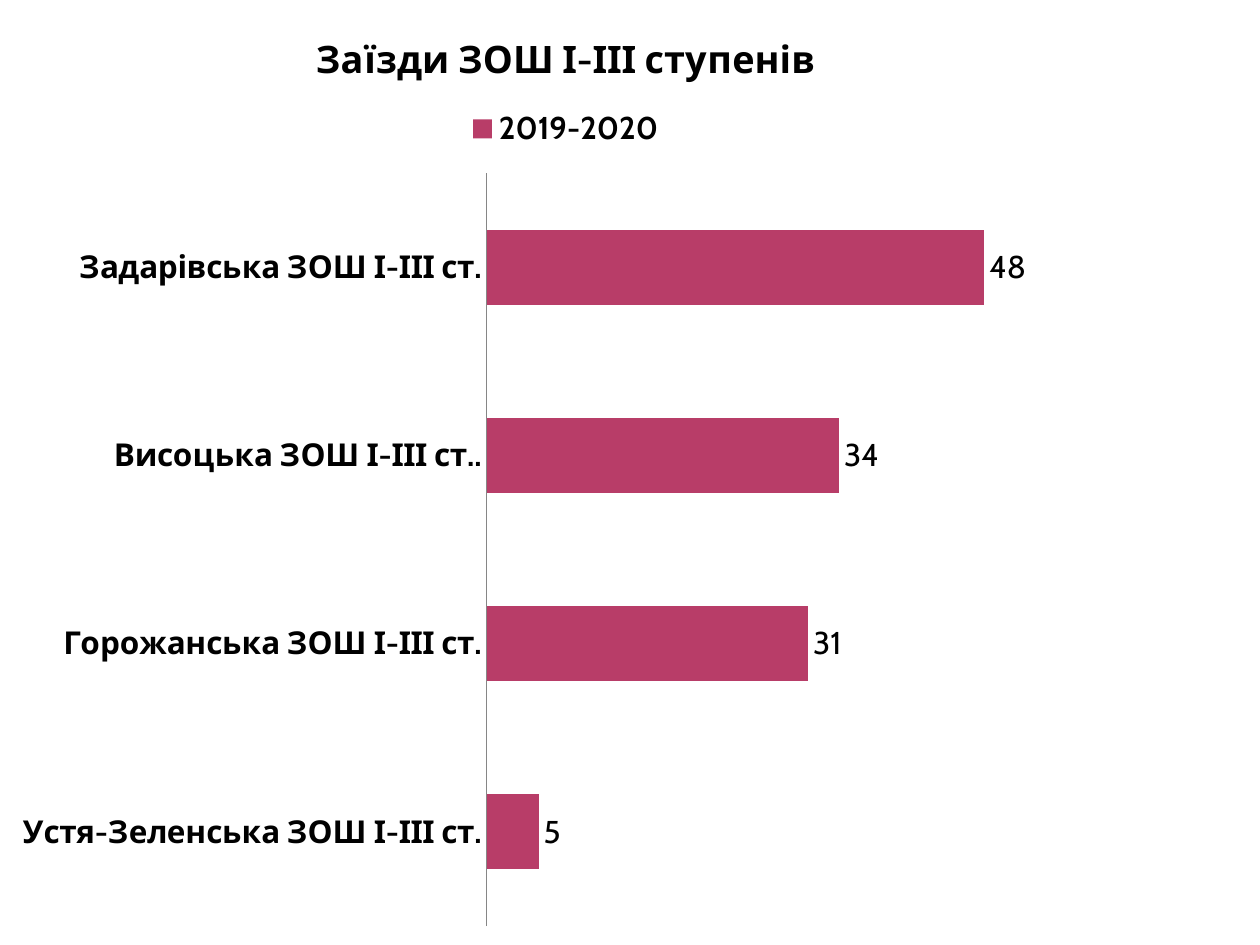
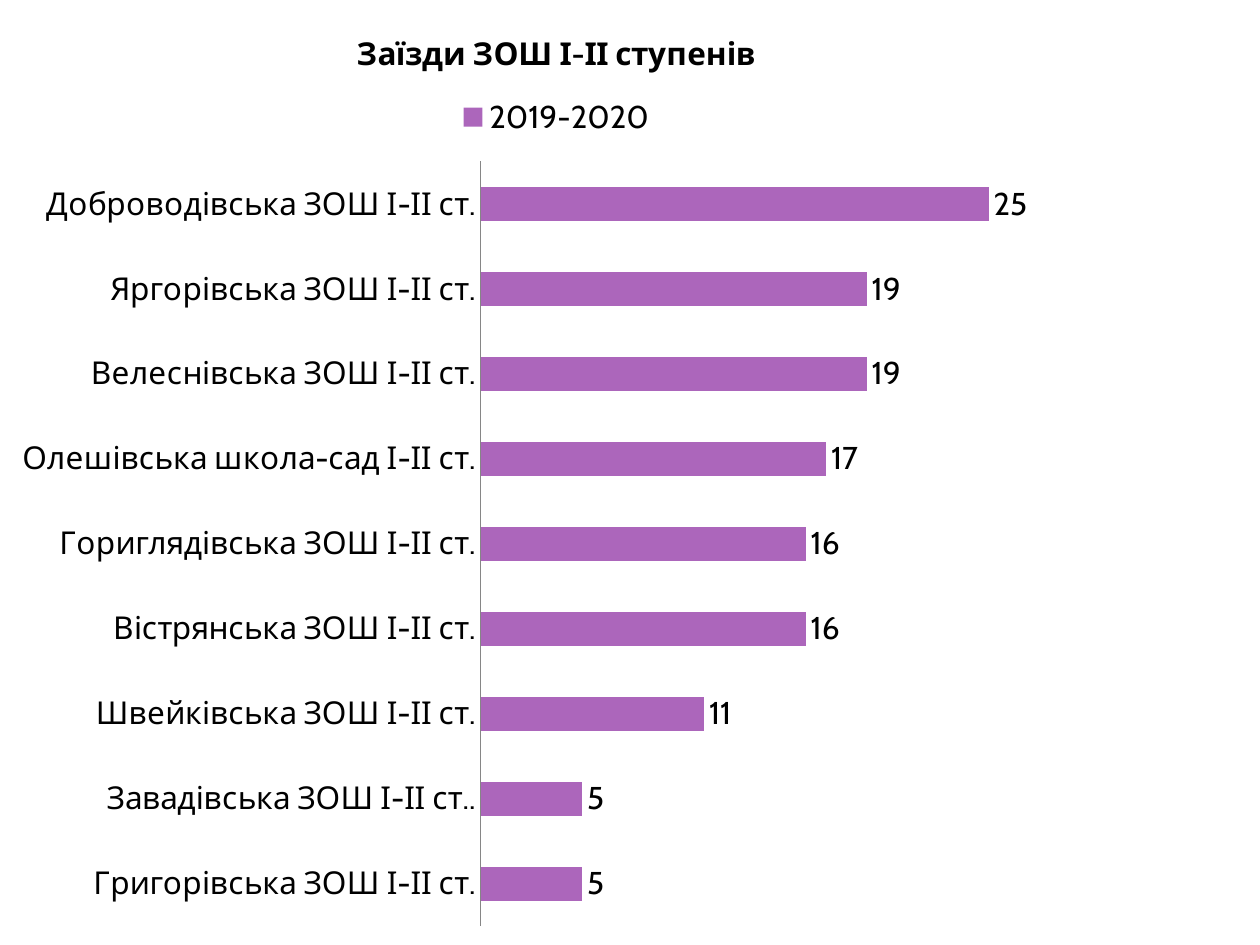
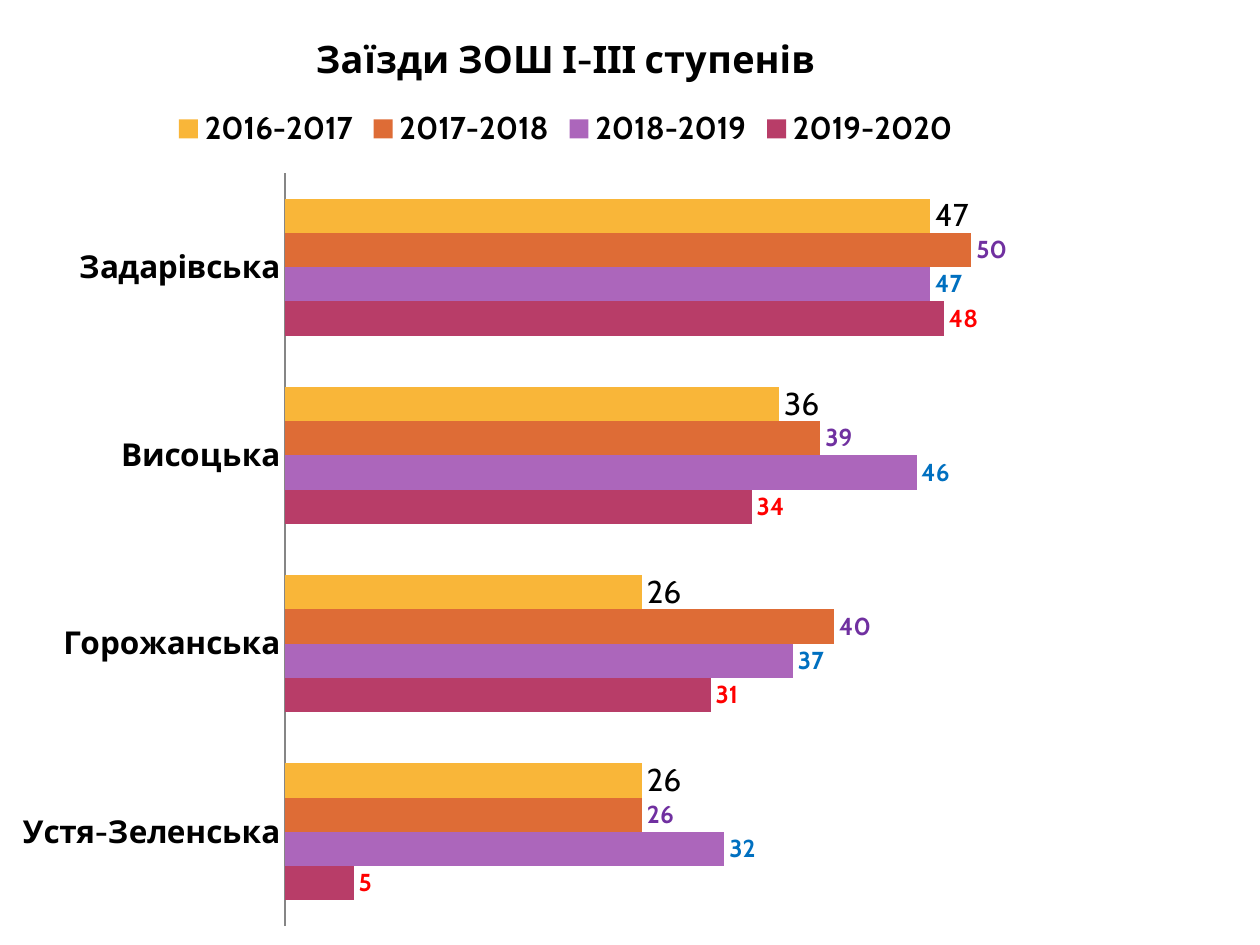
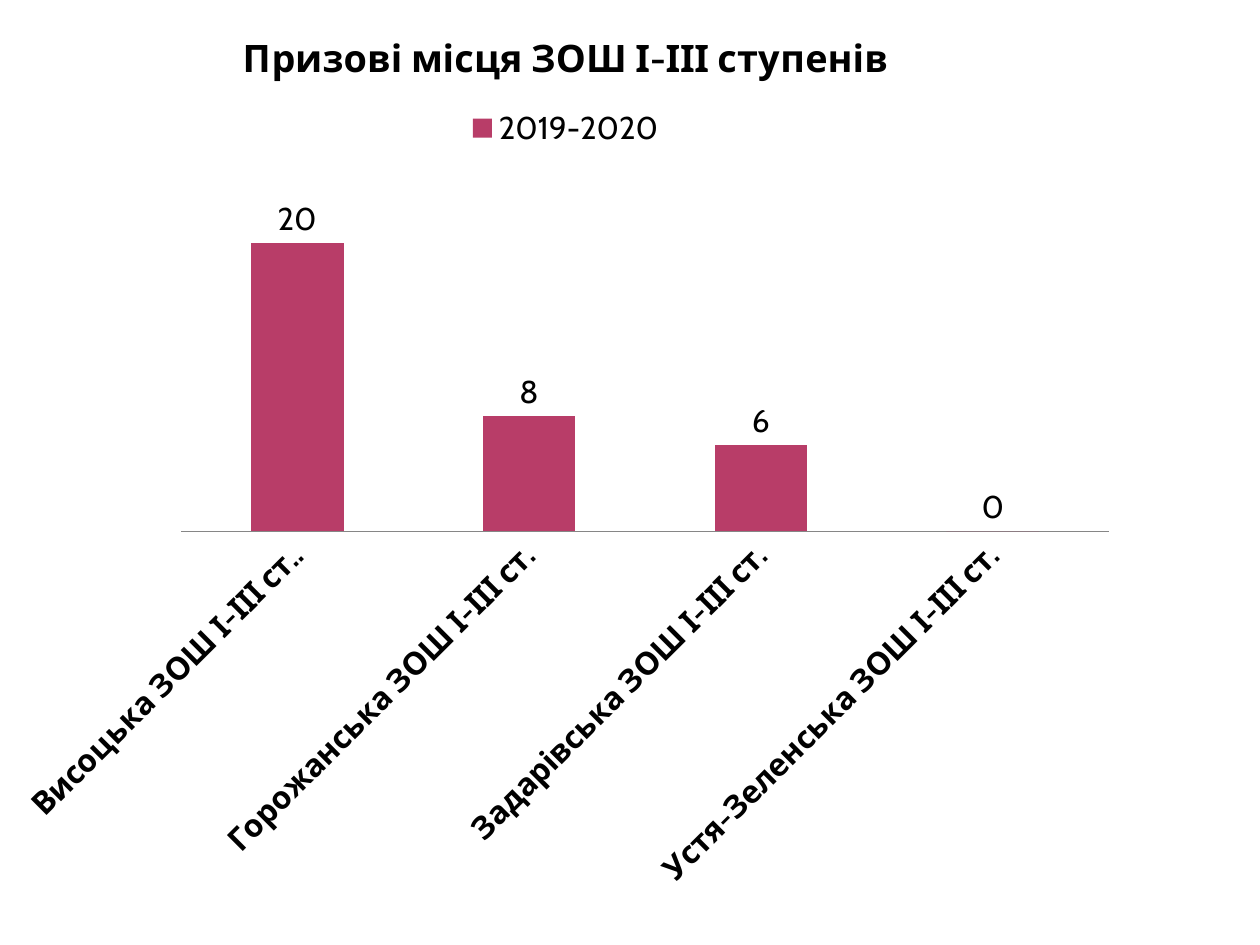
"""Build four chart slides on school camp arrivals and prize places."""
import dataclasses
import typing

import pptx
import pptx.chart.data
import pptx.dml.color
import pptx.enum.chart
import pptx.util

Inches, Pt = pptx.util.Inches, pptx.util.Pt
XL = pptx.enum.chart

FONT = "Cabin"
COLORS = {
    "text": "000000", "axis": "868686", "white": "FFFFFF",
    "berry": "B83D68", "violet": "AC66BB", "orange": "DE6C36", "amber": "F9B639",
    "red": "FF0000", "blue": "0070C0", "purple": "7030A0",
}
TYPE_III = " ЗОШ І-ІІІ ст."
TYPE_II = " ЗОШ І-ІІ ст."


@dataclasses.dataclass(frozen=True)
class Series:
    name: str
    values: tuple[int, ...]
    color: str = "berry"
    label_color: str = "text"
    label_size: float = 18
    label_bold: bool = False


@dataclasses.dataclass(frozen=True)
class ChartSlide:
    title: str
    categories: tuple[str, ...]
    series: tuple[Series, ...]
    width: float = 8.98
    height: float = 7.5
    title_size: float = 21.6
    bold_categories: bool = True
    bold_legend: bool = False
    columns: bool = False


ARRIVALS = (5, 31, 34, 48)
SLIDES = (
    ChartSlide(
        "Заїзди ЗОШ І-ІІІ ступенів",
        ("Устя-Зеленська" + TYPE_III, "Горожанська" + TYPE_III,
         "Висоцька" + TYPE_III + ".", "Задарівська" + TYPE_III),
        (Series("2019-2020", ARRIVALS),),
        bold_legend=True,
    ),
    ChartSlide(
        "Заїзди ЗОШ І-ІІ ступенів",
        ("Григорівська" + TYPE_II, "Завадівська" + TYPE_II + ".",
         "Швейківська" + TYPE_II, "Вістрянська" + TYPE_II,
         "Гориглядівська" + TYPE_II, "Олешівська школа-сад І-ІІ ст.",
         "Велеснівська" + TYPE_II, "Яргорівська" + TYPE_II,
         "Доброводівська" + TYPE_II),
        (Series("2019-2020", (5, 5, 11, 16, 16, 17, 19, 19, 25), "violet"),),
        width=8.83, title_size=18, bold_categories=False,
    ),
    ChartSlide(
        "Заїзди ЗОШ І-ІІІ ступенів",
        ("Устя-Зеленська", "Горожанська", "Висоцька", "Задарівська"),
        (Series("2019-2020", ARRIVALS, "berry", "red", 14, True),
         Series("2018-2019", (32, 37, 46, 47), "violet", "blue", 14, True),
         Series("2017-2018", (26, 40, 39, 50), "orange", "purple", 14, True),
         Series("2016-2017", (26, 26, 36, 47), "amber")),
        bold_legend=True,
    ),
    ChartSlide(
        "Призові місця ЗОШ І-ІІІ ступенів",
        ("Висоцька" + TYPE_III + ".", "Горожанська" + TYPE_III,
         "Задарівська" + TYPE_III, "Устя-Зеленська" + TYPE_III),
        (Series("2019-2020", (20, 8, 6, 0)),),
        height=7.19, columns=True,
    ),
)


def rgb(name: str) -> pptx.dml.color.RGBColor:
    return pptx.dml.color.RGBColor.from_string(COLORS[name])


def set_font(font: typing.Any, size: float = 18, bold: bool = False, color: str = "text") -> None:
    font.name, font.size, font.bold = FONT, Pt(size), bold
    font.color.rgb = rgb(color)


def style_axes(chart: typing.Any, spec: ChartSlide) -> None:
    cat, val = chart.category_axis, chart.value_axis
    cat.major_tick_mark = cat.minor_tick_mark = XL.XL_TICK_MARK.NONE
    cat.has_major_gridlines = val.has_major_gridlines = False
    cat.format.line.color.rgb = rgb("axis")
    cat.format.line.width = Pt(0.75)
    set_font(cat.tick_labels.font, bold=spec.bold_categories)
    if spec.columns:
        cat._element.xpath("c:txPr/a:bodyPr")[0].set("rot", "-2700000")
    val.minimum_scale = 0
    val.visible = False


def style_series(chart: typing.Any, spec: ChartSlide) -> None:
    plot = chart.plots[0]
    plot.vary_by_categories = False
    plot.gap_width = 150
    plot.overlap = -25 if spec.columns else 0
    for ser, item in zip(plot.series, spec.series):
        ser.format.fill.solid()
        ser.format.fill.fore_color.rgb = rgb(item.color)
        ser.invert_if_negative = False
        labels = ser.data_labels
        labels.show_value = True
        labels.position = XL.XL_LABEL_POSITION.OUTSIDE_END
        set_font(labels.font, item.label_size, item.label_bold, item.label_color)


def add_chart_slide(prs: typing.Any, spec: ChartSlide) -> None:
    s = prs.slides.add_slide(prs.slide_layouts[6])
    s.background.fill.solid()
    s.background.fill.fore_color.rgb = rgb("white")
    data = pptx.chart.data.CategoryChartData()
    data.categories = spec.categories
    for item in spec.series:
        data.add_series(item.name, item.values)
    kind = XL.XL_CHART_TYPE.COLUMN_CLUSTERED if spec.columns else XL.XL_CHART_TYPE.BAR_CLUSTERED
    chart = s.shapes.add_chart(
        kind, Inches(0), Inches(0), Inches(spec.width), Inches(spec.height), data).chart
    set_font(chart.font)
    chart.has_title = True
    r = chart.chart_title.text_frame.paragraphs[0].add_run()
    r.text = spec.title
    set_font(r.font, spec.title_size, True)
    chart.has_legend = True
    chart.legend.position = XL.XL_LEGEND_POSITION.TOP
    chart.legend.include_in_layout = False
    set_font(chart.legend.font, bold=spec.bold_legend)
    style_axes(chart, spec)
    style_series(chart, spec)


def main() -> None:
    prs = pptx.Presentation()
    prs.slide_width, prs.slide_height = Inches(10), Inches(7.5)
    for spec in SLIDES:
        add_chart_slide(prs, spec)
    prs.save("out.pptx")


if __name__ == "__main__":
    main()
